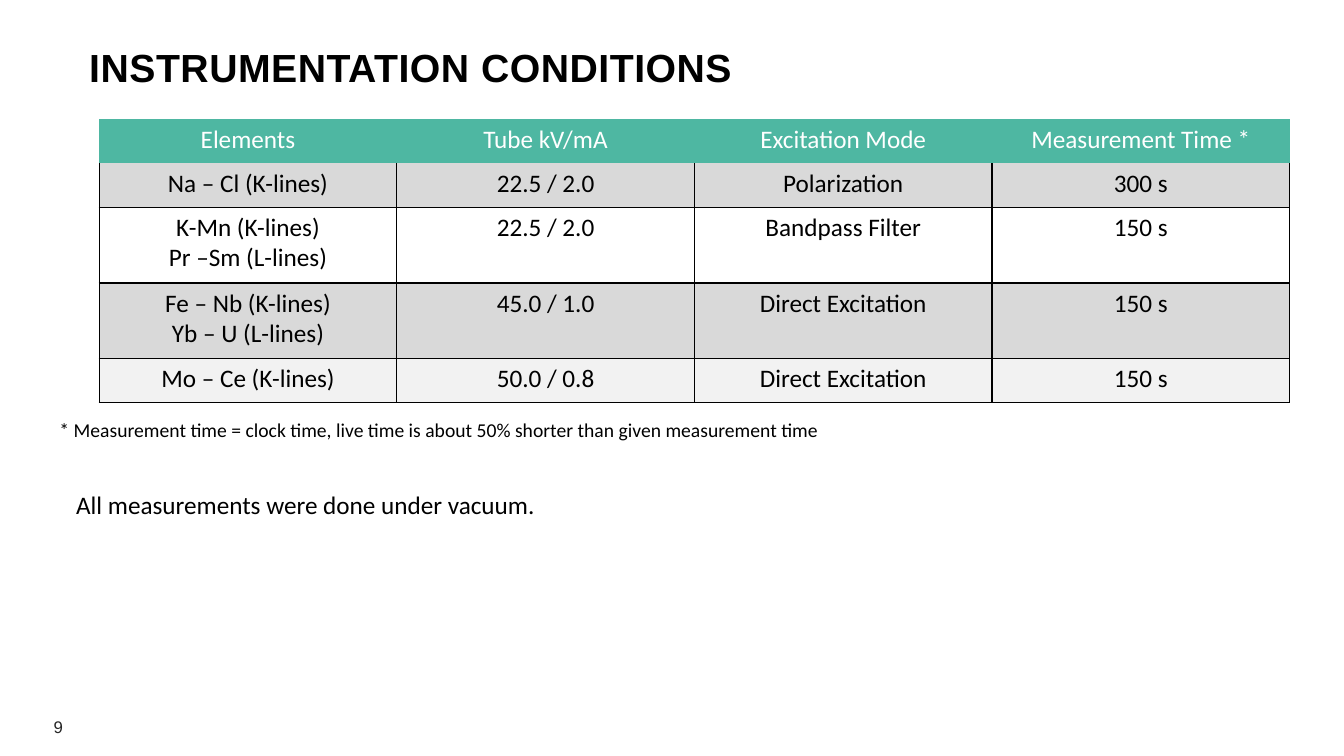
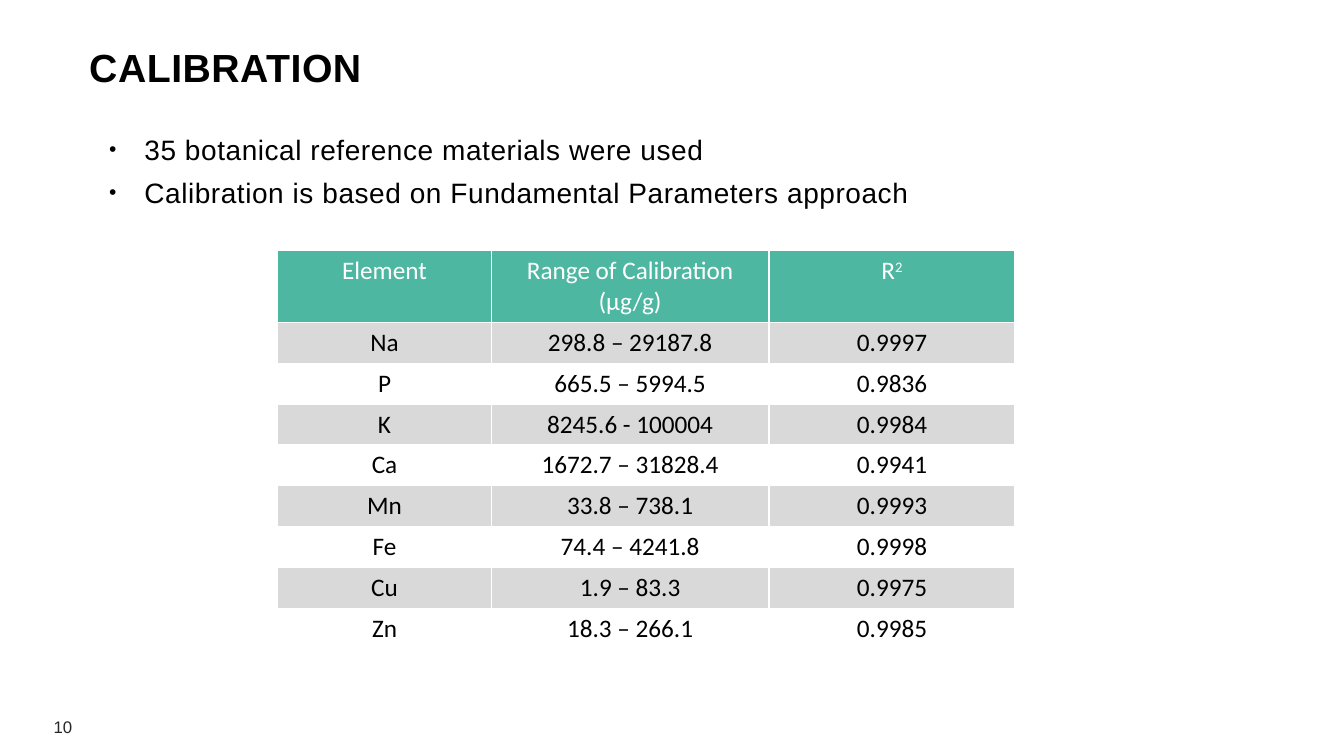
from lxml import etree
from pptx import Presentation
from pptx.dml.color import RGBColor
from pptx.enum.text import MSO_ANCHOR, PP_ALIGN
from pptx.oxml.ns import qn
from pptx.util import Cm, Pt

TOP = MSO_ANCHOR.TOP
MID = MSO_ANCHOR.MIDDLE
MIX = PP_ALIGN.CENTER
TEAL, GREY, PALE = "4EB7A2", "D9D9D9", "F2F2F2"
WHITE, BLACK, DARK = "FFFFFF", "000000", "262626"
SANS, BODY = "Arial", "Calibri"
rgb = RGBColor.from_string


def write(para, text, size, font, hue=BLACK, bold=False, gap=0):
    run = para.add_run()
    run.text = text
    run.font.size = Pt(size)
    run.font.name = font
    run.font.bold = bold
    run.font.color.rgb = rgb(hue)
    if gap:
        run.font._element.set("spc", str(gap))
    return run


def box(slide, left, top, width, height, anchor=TOP):
    frame = slide.shapes.add_textbox(Cm(left), Cm(top), Cm(width), Cm(height)).text_frame
    frame.word_wrap = True
    frame.vertical_anchor = anchor
    return frame


tube = [
    ["Elements", "Tube kV/mA", "Excitation Mode", "Measurement Time *"],
    ["Na – Cl (K-lines)", "22.5 / 2.0", "Polarization", "300 s"],
    ["K-Mn (K-lines)\nPr –Sm (L-lines)", "22.5 / 2.0", "Bandpass Filter", "150 s"],
    ["Fe – Nb (K-lines)\nYb – U (L-lines)", "45.0 / 1.0", "Direct Excitation", "150 s"],
    ["Mo – Ce (K-lines)", "50.0 / 0.8", "Direct Excitation", "150 s"],
]
fit = [
    ["Element", "Range of Calibration (µg/g)", "R^2"],
    ["Na", "298.8 – 29187.8", "0.9997"],
    ["P", "665.5 – 5994.5", "0.9836"],
    ["K", "8245.6 - 100004", "0.9984"],
    ["Ca", "1672.7 – 31828.4", "0.9941"],
    ["Mn", "33.8 – 738.1", "0.9993"],
    ["Fe", "74.4 – 4241.8", "0.9998"],
    ["Cu", "1.9 – 83.3", "0.9975"],
    ["Zn", "18.3 – 266.1", "0.9985"],
]
pages = [
    dict(num="9", title="INSTRUMENTATION CONDITIONS", points=[],
         rows=tube, left=2.5, top=3, wide=[7.5] * 4,
         high=[1.11, 1.11, 1.91, 1.91, 1.11],
         fills=[TEAL, GREY, WHITE, GREY, PALE], ruled=True,
         notes=[("* Measurement time = clock time, live time is about 50% shorter than given measurement time",
                 1.25, 10.41, 14),
                ("All measurements were done under vacuum.", 1.67, 12.2, 18)]),
    dict(num="10", title="CALIBRATION",
         points=["35 botanical reference materials were used",
                 "Calibration is based on Fundamental Parameters approach"],
         rows=fit, left=7, top=6.32, wide=[5.38, 7, 6.2],
         high=[1.8] + [1.03] * 8,
         fills=[TEAL] + [GREY, WHITE] * 4, ruled=False, notes=[]),
]

prs = Presentation()
prs.slide_width, prs.slide_height = Cm(33.87), Cm(19.05)

for page in pages:
    slide = prs.slides.add_slide(prs.slide_layouts[6])
    frame = box(slide, 1.1, 17.8, 7.62, 1.02, MID)
    write(frame.paragraphs[0], page["num"], 12, SANS, DARK)

    if page["points"]:
        frame = box(slide, 2.5, 3, 30, 3.2)
        for i, text in enumerate(page["points"]):
            para = frame.add_paragraph() if i else frame.paragraphs[0]
            ppr = para._p.get_or_add_pPr()
            ppr.set("marL", str(Cm(0.89)))
            ppr.set("indent", str(Cm(-0.99)))
            para.line_spacing = 1.25
            para.space_after = Pt(1)
            etree.SubElement(ppr, qn("a:buSzPct")).set("val", "75000")
            etree.SubElement(ppr, qn("a:buFont")).set("typeface", SANS)
            etree.SubElement(ppr, qn("a:buChar")).set("char", "•")
            write(para, text, 20, SANS, gap=40)

    para = box(slide, 2, 1.1, 30.5, 1.3).paragraphs[0]
    para.line_spacing = 0.9
    write(para, page["title"], 28, SANS, bold=True, gap=40)

    rows, wide, high = page["rows"], page["wide"], page["high"]
    table = slide.shapes.add_table(len(rows), len(wide), Cm(page["left"]), Cm(page["top"]),
                                   Cm(sum(wide)), Cm(sum(high))).table
    for col, width in zip(table.columns, wide):
        col.width = Cm(width)
    for r, row in enumerate(rows):
        table.rows[r].height = Cm(high[r])
        for c, text in enumerate(row):
            cell = table.cell(r, c)
            if page["ruled"]:
                for side in "LRTB":
                    edge = etree.SubElement(cell._tc.get_or_add_tcPr(), qn("a:ln" + side))
                    if r == 0 or (r == 1 and side == "T"):
                        etree.SubElement(edge, qn("a:noFill"))
                    else:
                        edge.set("w", str(Pt(1)))
                        fill = etree.SubElement(edge, qn("a:solidFill"))
                        etree.SubElement(fill, qn("a:srgbClr")).set("val", BLACK)
            cell.fill.solid()
            cell.fill.fore_color.rgb = rgb(page["fills"][r])
            hue = BLACK if r else WHITE
            for i, line in enumerate(text.split("\n")):
                para = cell.text_frame.add_paragraph() if i else cell.text_frame.paragraphs[0]
                para.alignment = MIX
                base, _, power = line.partition("^")
                write(para, base, 18, BODY, hue)
                if power:
                    run = write(para, power, 18, BODY, hue)
                    run.font._element.set("baseline", "30000")

    for text, left, top, size in page["notes"]:
        write(box(slide, left, top, 21, 1).paragraphs[0], text, size, BODY)

prs.save("out.pptx")
